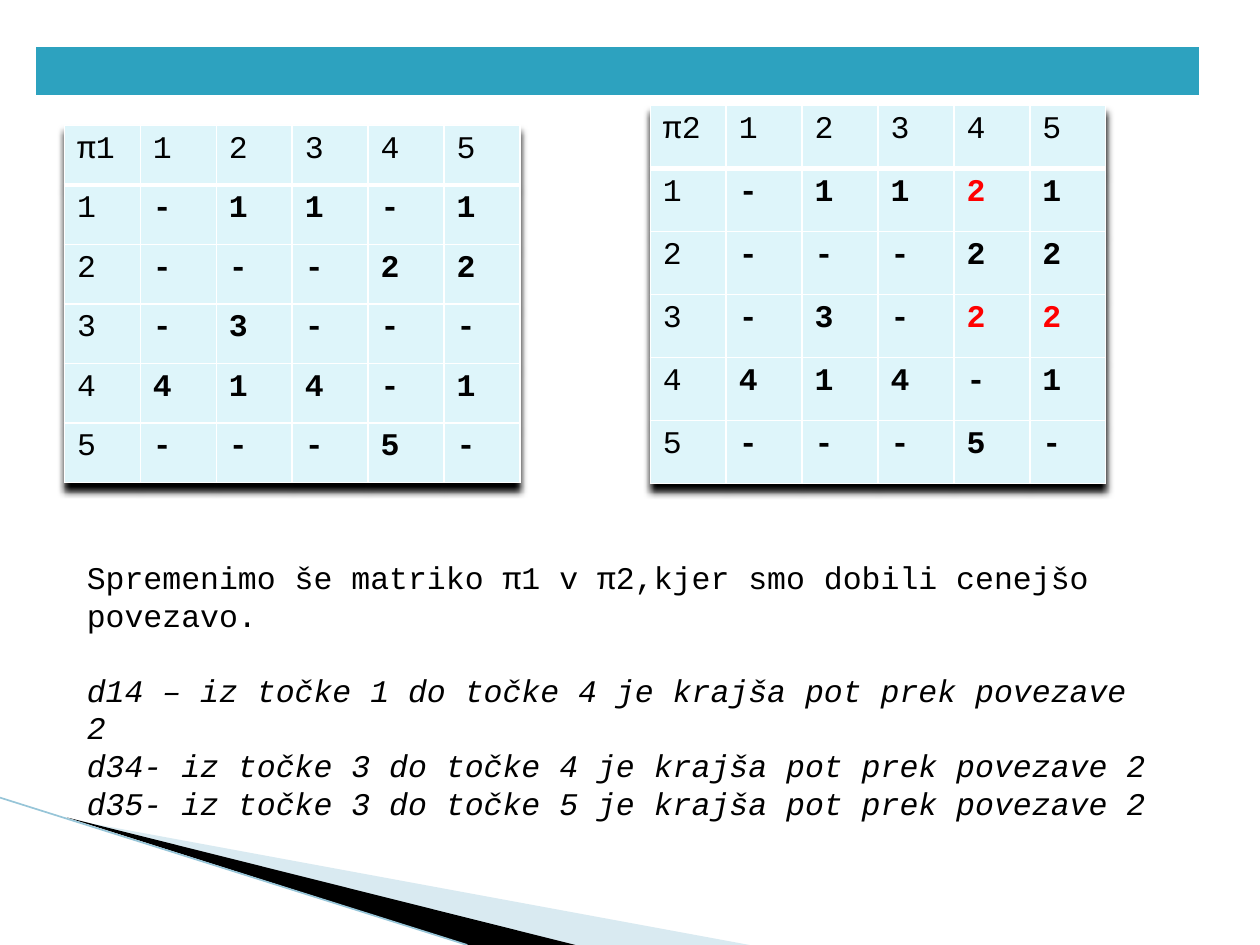
from dataclasses import dataclass

from lxml import etree
from pptx import Presentation
from pptx import util as u
from pptx.dml import color
from pptx.enum import shapes
from pptx.oxml import ns

FONT = "Courier New"
BLACK, WHITE, RED = "000000", "FFFFFF", "FF0000"
TEAL, PALE = "2DA2BF", "DEF5FA"
WEDGE, EDGE = "A0CBDC", "97C5D8"


@dataclass
class Grid:
    left: float
    top: float
    column: float
    row: float
    lines: list[str]
    fill: str = PALE
    red: tuple[tuple[int, int], ...] = ()
    shadow: bool = True


@dataclass
class Wedge:
    points: list[tuple[float, float]]
    fill: str
    opacity: int = 100


def rgb(value: str) -> color.RGBColor:
    return color.RGBColor.from_string(value)


def child(parent, tag: str, **attributes):
    return etree.SubElement(parent, ns.qn(tag), attributes)


def format_span(span, colour: str = BLACK, bold: bool = False, italic: bool = False) -> None:
    span.font.name = FONT
    span.font.size = u.Pt(18)
    span.font.bold = bold
    span.font.italic = italic
    span.font.color.rgb = rgb(colour)


def draw_wedge(page, wedge: Wedge) -> None:
    points = [(u.Cm(x), u.Cm(y)) for x, y in wedge.points]
    builder = page.shapes.build_freeform(*points[0])
    builder.add_line_segments(points[1:], close=True)
    shape = builder.convert_to_shape()
    shape.shadow.inherit = False
    shape.fill.solid()
    shape.fill.fore_color.rgb = rgb(wedge.fill)
    shape.line.fill.background()
    if wedge.opacity < 100:
        fill = shape.fill.fore_color._xFill
        child(fill[0], "a:alpha", val=str(wedge.opacity * 1000))


def draw_edge(page) -> None:
    edge = page.shapes.add_connector(
        shapes.MSO_CONNECTOR.STRAIGHT, u.Cm(0), u.Cm(16.08), u.Cm(9.42), u.Cm(19.05)
    )
    edge.line.color.rgb = rgb(EDGE)
    edge.line.width = u.Pt(0.95)
    child(edge._element.spPr, "a:effectLst")


def set_borders(cell, row: int) -> None:
    widths = {"L": 1, "R": 1, "T": 3 if row == 1 else 1, "B": 3 if row == 0 else 1}
    properties = cell._tc.get_or_add_tcPr()
    for side, width in widths.items():
        border = child(properties, f"a:ln{side}", w=str(u.Pt(width)))
        child(child(border, "a:solidFill"), "a:srgbClr", val=WHITE)


def add_shadow(table) -> None:
    effects = etree.Element(ns.qn("a:effectLst"))
    shadow = child(
        effects, "a:outerShdw", blurRad="50800", dist="50800",
        dir="5400000", algn="t", rotWithShape="0",
    )
    child(shadow, "a:srgbClr", val=BLACK)
    table._tbl.tblPr.insert(0, effects)


def draw_grid(page, grid: Grid) -> None:
    rows = [line.split() or [""] for line in grid.lines]
    columns = len(rows[0])
    table = page.shapes.add_table(
        len(rows), columns, u.Cm(grid.left), u.Cm(grid.top),
        u.Cm(grid.column * columns), u.Cm(grid.row * len(rows)),
    ).table
    table.horz_banding = False
    for column in table.columns:
        column.width = u.Cm(grid.column)
    for i, values in enumerate(rows):
        table.rows[i].height = u.Cm(grid.row)
        for j, value in enumerate(values):
            cell = table.cell(i, j)
            set_borders(cell, i)
            cell.fill.solid()
            cell.fill.fore_color.rgb = rgb(grid.fill)
            if value:
                cell.text_frame.text = value
                colour = RED if (i, j) in grid.red else BLACK
                format_span(cell.text_frame.paragraphs[0].runs[0], colour, i > 0 and j > 0)
    if grid.shadow:
        add_shadow(table)


def draw_explanation(page) -> None:
    lines = [
        "Spremenimo še matriko π1 v π2,kjer smo dobili cenejšo povezavo.",
        "d14 – iz točke 1 do točke 4 je krajša pot prek povezave 2",
        "d34- iz točke 3 do točke 4 je krajša pot prek povezave 2",
        "d35- iz točke 3 do točke 5 je krajša pot prek povezave 2",
    ]
    box = page.shapes.add_textbox(u.Cm(1.5), u.Cm(11.13), u.Cm(22.19), u.Cm(7.92))
    box.text_frame.word_wrap = True
    box.text_frame.text = "\n".join(lines)
    for i, para in enumerate(box.text_frame.paragraphs):
        format_span(para.runs[0], italic=i > 0)
    box.text_frame.paragraphs[1].space_before = u.Pt(21)


def main() -> None:
    deck = Presentation()
    deck.slide_width, deck.slide_height = u.Cm(25.4), u.Cm(19.05)
    page = deck.slides.add_slide(deck.slide_layouts[6])

    draw_wedge(page, Wedge([(1.4, 16.52), (15.11, 19.05), (11.58, 19.05)], WEDGE, 40))
    draw_wedge(page, Wedge([(1.35, 16.48), (11.6, 19.05), (9.42, 19.05)], BLACK))
    draw_edge(page)

    header = Grid(0.71, 0.93, 23.47, 1.0, [""], fill=TEAL, shadow=False)
    second = Grid(
        13.11, 2.13, 1.53, 1.27,
        ["π2 1 2 3 4 5", "1 - 1 1 2 1", "2 - - - 2 2",
         "3 - 3 - 2 2", "4 4 1 4 - 1", "5 - - - 5 -"],
        red=((1, 4), (3, 4), (3, 5)),
    )
    first = Grid(
        1.3, 2.53, 1.53, 1.2,
        ["π1 1 2 3 4 5", "1 - 1 1 - 1", "2 - - - 2 2",
         "3 - 3 - - -", "4 4 1 4 - 1", "5 - - - 5 -"],
    )
    for grid in (header, second, first):
        draw_grid(page, grid)
    draw_explanation(page)
    deck.save("out.pptx")


if __name__ == "__main__":
    main()
